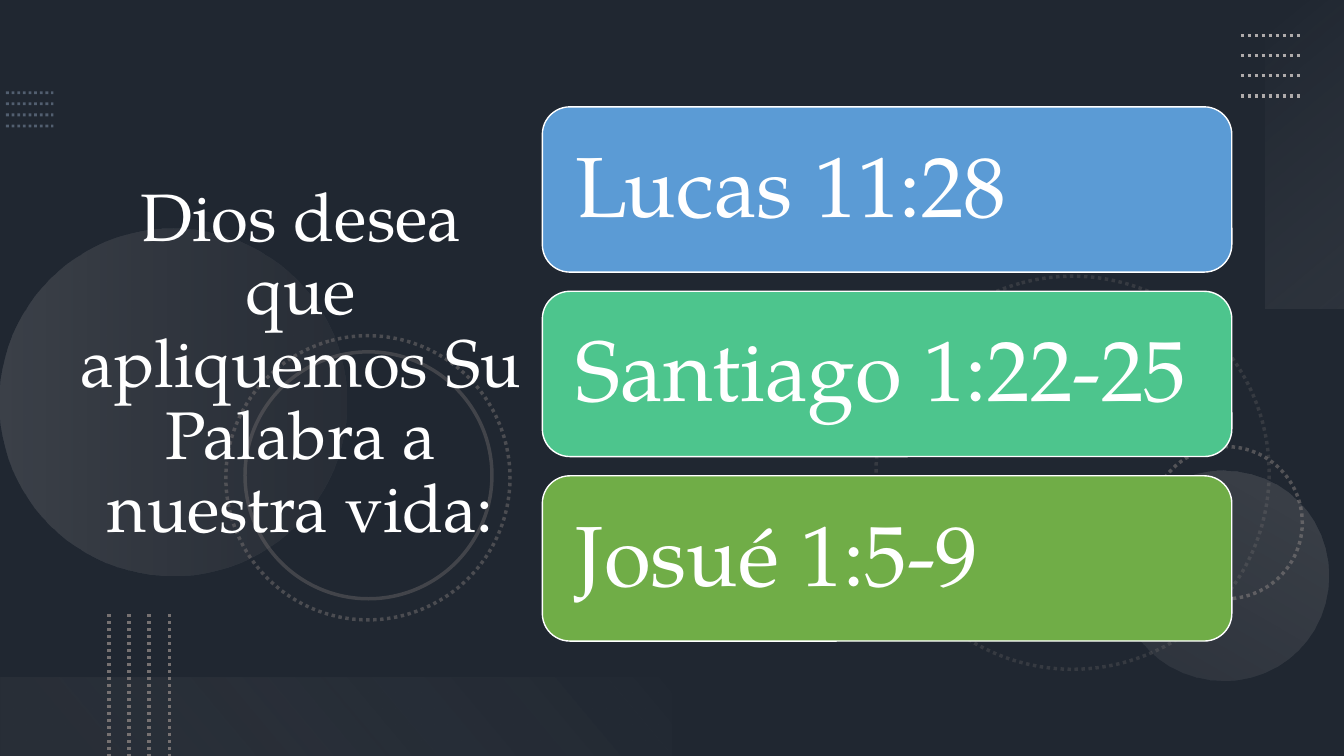
from lxml.etree import SubElement
from pptx import Presentation
from pptx.dml.color import RGBColor
from pptx.enum.dml import MSO_LINE
from pptx.enum.shapes import MSO_CONNECTOR, MSO_SHAPE
from pptx.enum.text import MSO_ANCHOR, PP_ALIGN
from pptx.oxml.ns import qn
from pptx.util import Pt

FONT = "TeX Gyre Pagella"
WHITE = RGBColor(0xFF, 0xFF, 0xFF)
BLACK = RGBColor(0x00, 0x00, 0x00)
SLATE = RGBColor(0x44, 0x54, 0x6A)
STEEL = RGBColor(0x84, 0x97, 0xB0)
SILVER = RGBColor(0xAF, 0xAB, 0xAB)
GRAY = RGBColor(0x76, 0x71, 0x71)
PALE = RGBColor(0xF5, 0xF5, 0xF5)
MIST = RGBColor(0xF1, 0xF0, 0xF0)
BLUE = RGBColor(0x5B, 0x9B, 0xD5)
TEAL = RGBColor(0x4D, 0xC5, 0x8D)
GREEN = RGBColor(0x70, 0xAD, 0x47)


def set_opacity(element, *percents):
    """Give each colour inside the element its opacity, in order."""
    for color, percent in zip(element.iter(qn("a:srgbClr")), percents):
        SubElement(color, qn("a:alpha"), val=str(percent * 1000))


def add_plain_shape(slide, preset, box, rotation=0):
    """Add a preset shape without shadow, fill or outline."""
    shape = slide.shapes.add_shape(preset, *map(Pt, box))
    shape.shadow.inherit = False
    shape.rotation = rotation
    shape.fill.background()
    shape.line.fill.background()
    return shape


def add_veil(slide, box):
    """Darken the box with translucent black."""
    veil = add_plain_shape(slide, MSO_SHAPE.RECTANGLE, box)
    veil.fill.solid()
    veil.fill.fore_color.rgb = BLACK
    set_opacity(veil._element.spPr, 53)


def add_glow(slide, preset, box, rotation, angle, stops):
    """Add a shape with a clockwise gradient of (position, colour, opacity) stops."""
    glow = add_plain_shape(slide, preset, box, rotation)
    glow.fill.gradient()
    glow.fill.gradient_angle = 360 - angle
    for stop, (position, color, _) in zip(glow.fill.gradient_stops, stops):
        stop.position = position
        stop.color.rgb = color
    set_opacity(glow._element.spPr, *(opacity for _, _, opacity in stops))


def add_ring(slide, box, rotation, opacity, dash):
    """Outline a circle in the box."""
    ring = add_plain_shape(slide, MSO_SHAPE.OVAL, box, rotation)
    ring.line.color.rgb = GRAY
    ring.line.width = Pt(2.5)
    ring.line.dash_style = dash
    set_opacity(ring._element.spPr, opacity)


def add_dots(slide, box, color, width=2.5, opacity=100, vertical=False):
    """Spread four dotted lines evenly over the box."""
    left, top, across, down = box
    for index in range(4):
        if vertical:
            x = left + across * index / 3
            ends = x, top, x, top + down
        else:
            y = top + down * index / 3
            ends = left, y, left + across, y
        dots = slide.shapes.add_connector(MSO_CONNECTOR.STRAIGHT, *map(Pt, ends))
        dots.line.color.rgb = color
        dots.line.width = Pt(width)
        dots.line.dash_style = MSO_LINE.ROUND_DOT
        properties = dots._element.spPr
        if opacity < 100:
            set_opacity(properties, opacity)
        SubElement(properties, qn("a:effectLst"))


def add_backdrop(slide, box):
    """Decorate the box with circles, dotted lines and faint bands."""
    left, top, width, height = box
    right, bottom = left + width, top + height
    dotted = MSO_LINE.ROUND_DOT
    add_veil(slide, box)
    add_dots(slide, (left + 4.3, top + 66.2, 33.8, 23.8), STEEL, 2, 50)
    add_ring(slide, (right - 334.3, top + 197.3, 280.8, 280.8), 75, 25, dotted)
    add_ring(slide, (right - 138.5, top + 319, 108.7, 108.7), 270, 60, dotted)
    add_glow(slide, MSO_SHAPE.OVAL, (left, top + 163.4, 247.7, 247.7), 270, 90,
             [(0, SILVER, 20), (1, GRAY, 10)])
    add_glow(slide, MSO_SHAPE.OVAL, (right - 160.8, top + 336.2, 149.8, 149.8), 210, 90,
             [(0, SILVER, 10), (1, SILVER, 20)])
    add_ring(slide, (left + 161.3, top + 239.8, 203, 203), 75, 50, dotted)
    add_ring(slide, (left + 175, top + 251.3, 176.4, 176.4), 75, 40, MSO_LINE.SOLID)
    add_glow(slide, MSO_SHAPE.RECTANGLE, (right - 137.8, top + 82.1, 220.3, 56.2), 270, 140,
             [(0, PALE, 0), (1, SILVER, 10)])
    add_dots(slide, (right - 73.7, top + 25.2, 43.2, 43.2), SILVER)
    add_glow(slide, MSO_SHAPE.RECTANGLE, (left, bottom - 56.2, width / 2, 56.2), 180, 140,
             [(0.1, GRAY, 10), (1, MIST, 0)])
    add_dots(slide, (left + 77.8, bottom - 101.5, 43.2, 101.5), GRAY, vertical=True)


def write_line(frame, words, size, alignment):
    """Write one white, vertically centred paragraph."""
    frame.word_wrap = True
    frame.vertical_anchor = MSO_ANCHOR.MIDDLE
    paragraph = frame.paragraphs[0]
    paragraph.text = words
    paragraph.alignment = alignment
    paragraph.line_spacing = 0.9
    paragraph.font.name = FONT
    paragraph.font.size = Pt(size)
    paragraph.font.color.rgb = WHITE


def add_heading(slide, box, words):
    """Centre the heading in the box."""
    heading = slide.shapes.add_textbox(*map(Pt, box))
    write_line(heading.text_frame, words, 48, PP_ALIGN.CENTER)


def add_verses(slide, box, verses, gap):
    """Stack one rounded card per verse in the box."""
    left, top, width, height = box
    card_height = (height - gap * (len(verses) - 1)) / len(verses)
    for index, (verse, color) in enumerate(verses):
        card_top = top + index * (card_height + gap)
        card = add_plain_shape(slide, MSO_SHAPE.ROUNDED_RECTANGLE,
                               (left, card_top, width, card_height))
        card.fill.solid()
        card.fill.fore_color.rgb = color
        card.line.color.rgb = WHITE
        card.line.width = Pt(1)
        frame = card.text_frame
        frame.margin_left = frame.margin_right = Pt(18)
        frame.margin_top = frame.margin_bottom = Pt(18)
        write_line(frame, verse, 61, PP_ALIGN.LEFT)


def main():
    """Build and save the slide."""
    deck = Presentation()
    deck.slide_width, deck.slide_height = Pt(960), Pt(540)
    slide = deck.slides.add_slide(deck.slide_layouts[6])
    slide.background.fill.solid()
    slide.background.fill.fore_color.rgb = SLATE
    add_backdrop(slide, (0, 0, 960, 540))
    add_heading(slide, (49.7, 38.9, 330.5, 444.2),
                "Dios desea que apliquemos Su Palabra a nuestra vida:")
    verses = [("Lucas 11:28", BLUE), ("Santiago 1:22-25", TEAL), ("Josué 1:5-9", GREEN)]
    add_verses(slide, (387.4, 76.3, 492.5, 381.6), verses, 13.7)
    deck.save("out.pptx")


if __name__ == "__main__":
    main()
